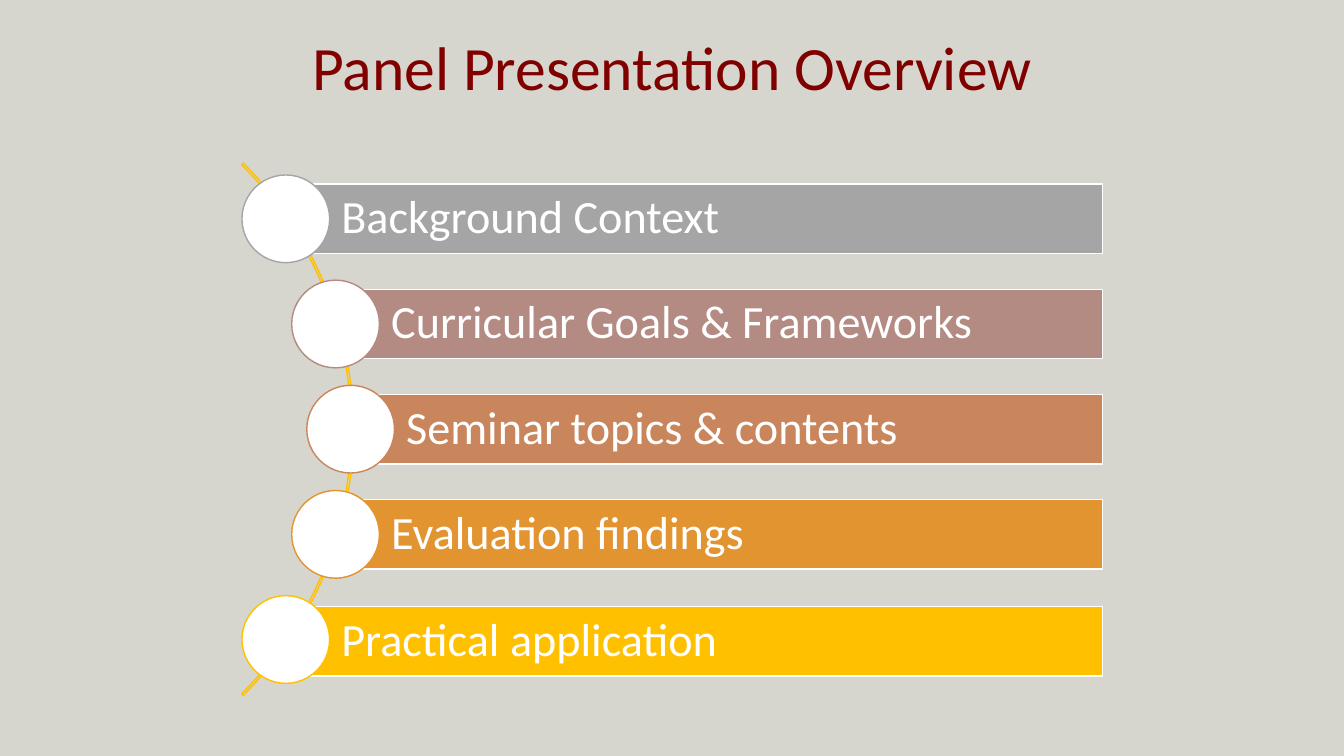
import math

import pptx
import pptx.dml.color
import pptx.enum.shapes
import pptx.enum.text
import pptx.util

Cm = pptx.util.Cm
Pt = pptx.util.Pt
RGBColor = pptx.dml.color.RGBColor
MSO_SHAPE = pptx.enum.shapes.MSO_SHAPE
PP_ALIGN = pptx.enum.text.PP_ALIGN
MSO_ANCHOR = pptx.enum.text.MSO_ANCHOR

BACKGROUND = RGBColor(0xD6, 0xD6, 0xCE)
MAROON = RGBColor(0x80, 0x00, 0x00)
WHITE = RGBColor(0xFF, 0xFF, 0xFF)
GREY = RGBColor(0xA5, 0xA5, 0xA5)
ROSE = RGBColor(0xB4, 0x8B, 0x83)
COPPER = RGBColor(0xC9, 0x86, 0x5C)
ORANGE = RGBColor(0xE1, 0x94, 0x30)
GOLD = RGBColor(0xFF, 0xC0, 0x00)

# Topic, colour, downward shift of its bar
TOPICS = [
    ("Background Context", GREY, Cm(0)),
    ("Curricular Goals & Frameworks", ROSE, Cm(0)),
    ("Seminar topics & contents", COPPER, Cm(0)),
    ("Evaluation findings", ORANGE, Cm(0)),
    ("Practical application", GOLD, Cm(0.05)),
]
TOPIC_STEP = Cm(2.65)
BAR_HEIGHT = Cm(1.75)
CIRCLE_SIZE = Cm(2.21)
CIRCLE_INSET = Cm(0.07)


def write_line(frame, text, size, colour, align):
    frame.word_wrap = True
    frame.vertical_anchor = MSO_ANCHOR.MIDDLE
    paragraph = frame.paragraphs[0]
    paragraph.alignment = align
    paragraph.line_spacing = 0.9
    run = paragraph.add_run()
    run.text = text
    run.font.name = "Calibri"
    run.font.size = Pt(size)
    run.font.color.rgb = colour


def add_outlined(slide, kind, box, fill, line):
    shape = slide.shapes.add_shape(kind, *(round(length) for length in box))
    shape.shadow.inherit = False
    if fill is None:
        shape.fill.background()
    else:
        shape.fill.solid()
        shape.fill.fore_color.rgb = fill
    shape.line.color.rgb = line
    shape.line.width = Pt(1)
    return shape


def add_title(slide, left, top, width, height):
    title = slide.shapes.add_textbox(left, top, width, height)
    write_line(title.text_frame, "Panel Presentation Overview", 44, MAROON,
               PP_ALIGN.CENTER)


def add_topic_list(slide, left, top, width, height):
    # A quarter circle whose chord is the left edge of the box
    radius = height / math.sqrt(2)
    centre_x = left - height / 2
    centre_y = top + height / 2
    arc = add_outlined(
        slide, MSO_SHAPE.BLOCK_ARC,
        (centre_x - radius, centre_y - radius, 2 * radius, 2 * radius),
        None, GOLD)
    for index, value in enumerate((189, 27, 0.003)):
        arc.adjustments[index] = value

    # Bars start at the middle of circles strung along the arc
    for index, (topic, colour, bar_shift) in enumerate(TOPICS):
        offset = (index - (len(TOPICS) - 1) / 2) * TOPIC_STEP
        x = centre_x + math.sqrt((radius - CIRCLE_INSET) ** 2 - offset ** 2)
        y = centre_y + offset
        bar = add_outlined(
            slide, MSO_SHAPE.RECTANGLE,
            (x, y - BAR_HEIGHT / 2 + bar_shift, left + width - x, BAR_HEIGHT),
            colour, WHITE)
        frame = bar.text_frame
        frame.margin_left = Cm(1.4)
        frame.margin_top = frame.margin_right = frame.margin_bottom = Cm(0.23)
        write_line(frame, topic, 33, WHITE, PP_ALIGN.LEFT)
        add_outlined(
            slide, MSO_SHAPE.OVAL,
            (x - CIRCLE_SIZE / 2, y - CIRCLE_SIZE / 2, CIRCLE_SIZE, CIRCLE_SIZE),
            WHITE, colour)


def main():
    presentation = pptx.Presentation()
    presentation.slide_width = Cm(33.87)
    presentation.slide_height = Cm(19.05)
    slide = presentation.slides.add_slide(presentation.slide_layouts[6])
    slide.background.fill.solid()
    slide.background.fill.fore_color.rgb = BACKGROUND
    add_title(slide, Cm(2.34), Cm(0.28), Cm(29.21), Cm(3.02))
    add_topic_list(slide, Cm(6.13), Cm(4.11), Cm(21.66), Cm(13.41))
    presentation.save("out.pptx")


if __name__ == "__main__":
    main()
